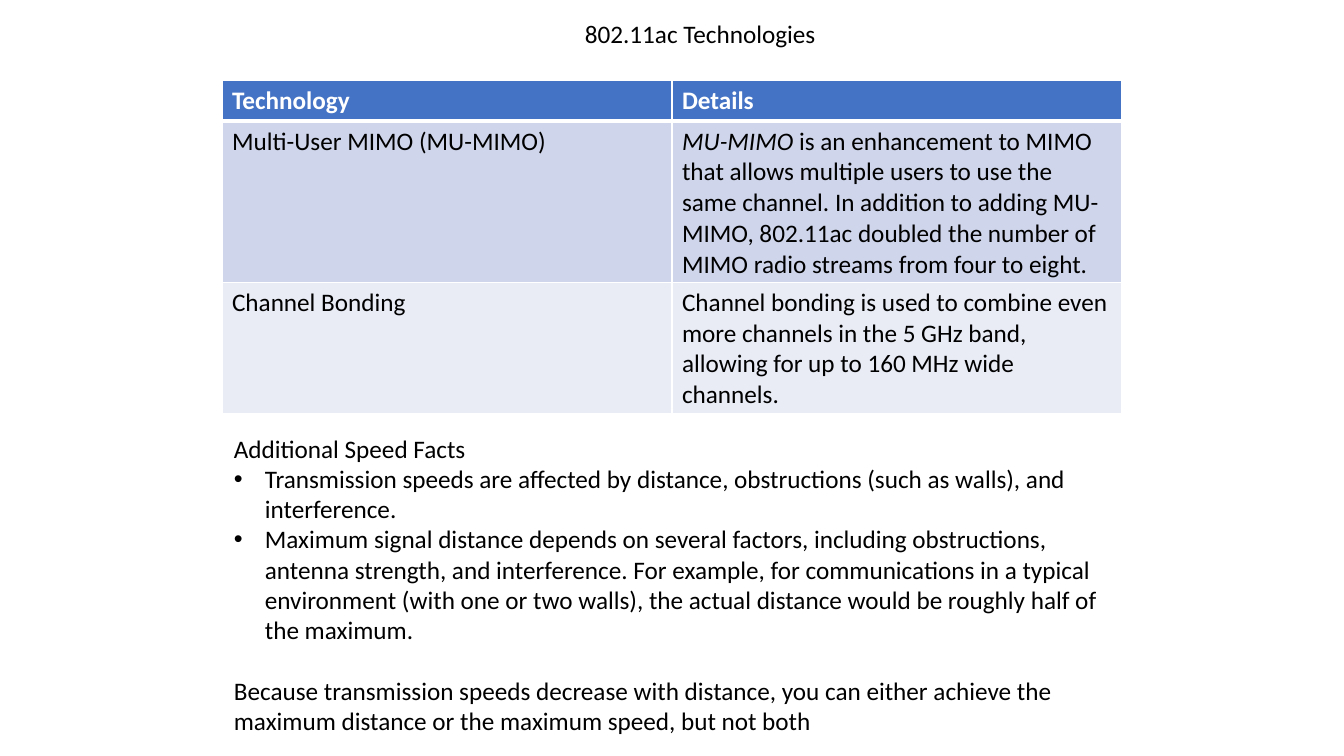
"""Builds the slide on 802.11ac technologies."""
import pptx
import pptx.dml.color
import pptx.oxml.ns
import pptx.util
import lxml.etree

PX = 914400 / 100.8
BLACK, WHITE = "000000", "FFFFFF"


def px(n):
    return pptx.util.Emu(round(n * PX))


def add_text(p, text, size=18, color=BLACK, bold=False, italic=False):
    r = p.add_run()
    r.text = text
    r.font.name = "Calibri"
    r.font.size = pptx.util.Pt(size)
    r.font.bold = bold
    r.font.italic = italic
    r.font.color.rgb = pptx.dml.color.RGBColor.from_string(color)


prs = pptx.Presentation()
prs.slide_width, prs.slide_height = px(1344), px(756)
s = prs.slides.add_slide(prs.slide_layouts[6])
qn = pptx.oxml.ns.qn

tf = s.shapes.add_textbox(px(575), px(13), px(264), px(40)).text_frame
tf.word_wrap = False
add_text(tf.paragraphs[0], "802.11ac Technologies")

rows = [
    (41, "4472C4", "Technology", [("Details", False)]),
    (161, "CFD5EA", "Multi-User MIMO (MU-MIMO)", [
        ("MU-MIMO", True),
        (" is an enhancement to MIMO that allows multiple users to use the same channel. "
         "In addition to adding MU-MIMO, 802.11ac doubled the number of MIMO radio streams "
         "from four to eight.", False)]),
    (131, "E9EBF5", "Channel Bonding", [
        ("Channel bonding is used to combine even more channels in the 5 GHz band, "
         "allowing for up to 160 MHz wide channels.", False)]),
]
height = sum(row[0] for row in rows)
table = s.shapes.add_table(len(rows), 2, px(222), px(80), px(900), px(height)).table
for i, (row_height, fill, technology, details) in enumerate(rows):
    table.rows[i].height = px(row_height)
    header = i == 0
    for cell, runs in zip(table.rows[i].cells, ([(technology, False)], details)):
        for text, italic in runs:
            add_text(cell.text_frame.paragraphs[0], text, color=WHITE if header else BLACK,
                     bold=header, italic=italic)
        tcPr = cell._tc.get_or_add_tcPr()
        for side in "LRTB":
            thick = (i, side) in ((0, "B"), (1, "T"))
            ln = lxml.etree.SubElement(tcPr, qn(f"a:ln{side}"),
                                       w=str(pptx.util.Pt(3 if thick else 1)))
            solid = lxml.etree.SubElement(ln, qn("a:solidFill"))
            lxml.etree.SubElement(solid, qn("a:srgbClr"), val=WHITE)
        cell.fill.solid()
        cell.fill.fore_color.rgb = pptx.dml.color.RGBColor.from_string(fill)

facts = [
    ("Additional Speed Facts", False, 0),
    ("Transmission speeds are affected by distance, obstructions (such as walls), "
     "and interference.", True, 0),
    ("Maximum signal distance depends on several factors, including obstructions, antenna "
     "strength, and interference. For example, for communications in a typical environment "
     "(with one or two walls), the actual distance would be roughly half of the maximum.",
     True, 0),
    ("Because transmission speeds decrease with distance, you can either achieve the maximum "
     "distance or the maximum speed, but not both", False, 22),
]
tf = s.shapes.add_textbox(px(224), px(428), px(896), px(316)).text_frame
tf.word_wrap = True
for i, (text, bullet, gap) in enumerate(facts):
    p = tf.add_paragraph() if i else tf.paragraphs[0]
    p.space_before = pptx.util.Pt(gap)
    add_text(p, text)
    if bullet:
        pPr = p._p.get_or_add_pPr()
        pPr.set("marL", str(px(31)))
        pPr.set("indent", str(px(-31)))
        lxml.etree.SubElement(pPr, qn("a:buFont"), typeface="Arial")
        lxml.etree.SubElement(pPr, qn("a:buChar"), char="•")

prs.save("out.pptx")
